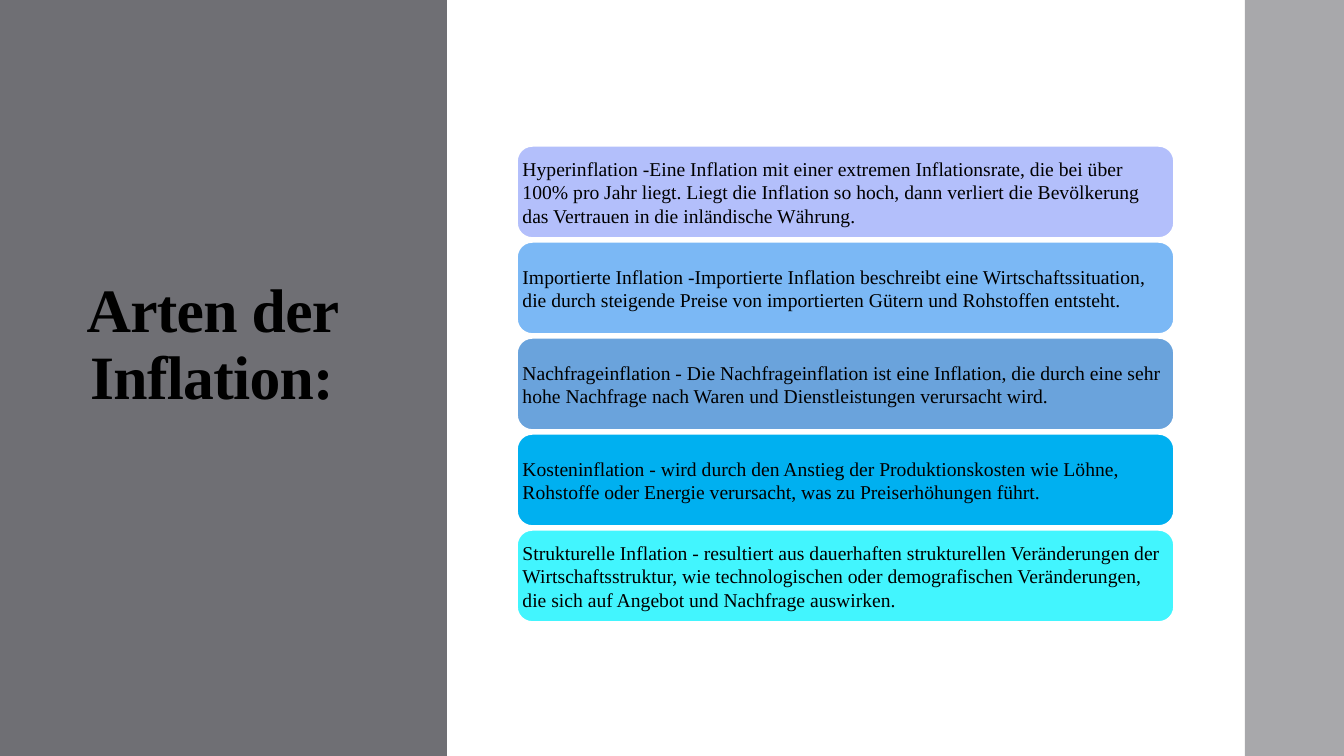
from pptx import Presentation
from pptx import util as u
from pptx.dml.color import RGBColor
from pptx.enum import shapes, text

PX = 12192000 / 1344
FONT = "Times New Roman"
BLACK = RGBColor(0x00, 0x00, 0x00)
WHITE = RGBColor(0xFF, 0xFF, 0xFF)
DARK_GREY = RGBColor(0x6F, 0x6F, 0x74)
LIGHT_GREY = RGBColor(0xA8, 0xA8, 0xAB)
LAVENDER = RGBColor(0xB3, 0xBF, 0xFB)
SKY = RGBColor(0x7B, 0xB8, 0xF5)
STEEL = RGBColor(0x6A, 0xA3, 0xDC)
AZURE = RGBColor(0x00, 0xB0, 0xF0)
CYAN = RGBColor(0x42, 0xF5, 0xFE)

CARD_LEFT, CARD_TOP, CARD_WIDTH, CARD_HEIGHT, CARD_PITCH = 517, 146, 657, 92, 96
CARDS = [
    (LAVENDER, "Hyperinflation -Eine Inflation mit einer extremen Inflationsrate, die bei über 100% pro Jahr liegt. Liegt die Inflation so hoch, dann verliert die Bevölkerung das Vertrauen in die inländische Währung."),
    (SKY, "Importierte Inflation -Importierte Inflation beschreibt eine Wirtschaftssituation, die durch steigende Preise von importierten Gütern und Rohstoffen entsteht."),
    (STEEL, "Nachfrageinflation - Die Nachfrageinflation ist eine Inflation, die durch eine sehr hohe Nachfrage nach Waren und Dienstleistungen verursacht wird."),
    (AZURE, "Kosteninflation - wird durch den Anstieg der Produktionskosten wie Löhne, Rohstoffe oder Energie verursacht, was zu Preiserhöhungen führt."),
    (CYAN, "Strukturelle Inflation - resultiert aus dauerhaften strukturellen Veränderungen der Wirtschaftsstruktur, wie technologischen oder demografischen Veränderungen, die sich auf Angebot und Nachfrage auswirken."),
]


def px(length):
    return u.Emu(round(length * PX))


def write(shape, words, size, bold=False, align=text.PP_ALIGN.LEFT,
          line_spacing=1.0, letter_spacing=0, insets=(0, 0, 0, 0)):
    frame = shape.text_frame
    frame.word_wrap = True
    frame.auto_size = text.MSO_AUTO_SIZE.NONE
    frame.vertical_anchor = text.MSO_ANCHOR.MIDDLE
    (frame.margin_left, frame.margin_top,
     frame.margin_right, frame.margin_bottom) = map(px, insets)
    paragraph = frame.paragraphs[0]
    paragraph.alignment = align
    paragraph.line_spacing = line_spacing
    run = paragraph.add_run()
    run.text = words
    run.font.name = FONT
    run.font.size = u.Pt(size)
    run.font.bold = bold
    run.font.color.rgb = BLACK
    if letter_spacing:
        run.font._element.set("spc", str(letter_spacing))


presentation = Presentation()
presentation.slide_width = px(1344)
presentation.slide_height = px(756)
slide = presentation.slides.add_slide(presentation.slide_layouts[5])
slide.background.fill.solid()
slide.background.fill.fore_color.rgb = WHITE

for left, width, color in [(0, 447, DARK_GREY), (1245, 99, LIGHT_GREY)]:
    panel = slide.shapes.add_shape(
        shapes.MSO_SHAPE.RECTANGLE, px(left), 0, px(width), px(756))
    panel.shadow.inherit = False
    panel.fill.solid()
    panel.fill.fore_color.rgb = color
    panel.line.fill.background()

title = slide.shapes.title
title.left, title.top, title.width, title.height = map(px, (62, 92, 300, 571))
write(title, "Arten der Inflation:", 44, bold=True, align=text.PP_ALIGN.CENTER,
      line_spacing=0.9, letter_spacing=-50, insets=(10, 5, 10, 68))
slide.shapes._spTree.append(title._element)

for index, (color, words) in enumerate(CARDS):
    card = slide.shapes.add_shape(
        shapes.MSO_SHAPE.ROUNDED_RECTANGLE, px(CARD_LEFT),
        px(CARD_TOP + index * CARD_PITCH), px(CARD_WIDTH), px(CARD_HEIGHT))
    card.shadow.inherit = False
    card.fill.solid()
    card.fill.fore_color.rgb = color
    card.line.color.rgb = WHITE
    card.line.width = u.Pt(1.1)
    write(card, words, 14, insets=(1, 1, 1, 1))

presentation.save("out.pptx")
